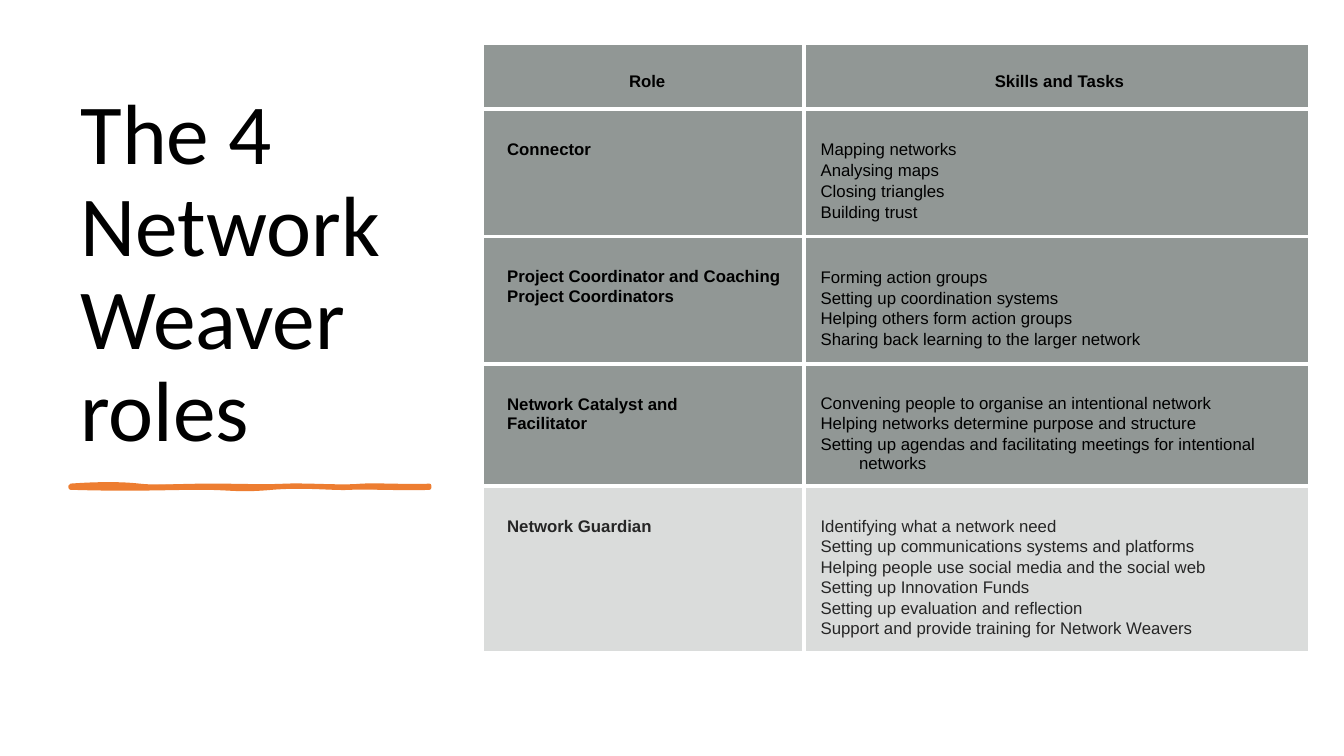
"""Build a slide with a title and a table of the four network weaver roles."""
from copy import deepcopy
from lxml.etree import SubElement
from pptx import Presentation
from pptx.dml.color import RGBColor
from pptx.enum.text import MSO_ANCHOR, PP_ALIGN
from pptx.oxml import parse_xml
from pptx.oxml.ns import nsdecls, qn
from pptx.util import Cm, Pt

COLORS = {"black": "000000", "dark": "262626", "white": "FFFFFF",
          "slate": "636B68", "mist": "878E8B", "orange": "ED7D31"}

ROLES = [
    ("Connector", 3.21, 1.07, 0,
     ["Mapping networks", "Analysing maps", "Closing triangles", "Building trust"]),
    ("Project Coordinator and Coaching Project Coordinators", 3.21, 1.07, 0,
     ["Forming action groups", "Setting up coordination systems",
      "Helping others form action groups",
      "Sharing back learning to the larger network"]),
    ("Network Catalyst and Facilitator", 3.08, 1.03, 1.2,
     ["Convening people to organise an intentional network",
      "Helping networks determine purpose and structure",
      "Setting up agendas and facilitating meetings for intentional networks"]),
    ("Network Guardian", 4.17, 1.05, 0,
     ["Identifying what a network need",
      "Setting up communications systems and platforms",
      "Helping people use social media and the social web",
      "Setting up Innovation Funds", "Setting up evaluation and reflection",
      "Support and provide training for Network Weavers"]),
]

STROKE_OUTLINE = [
    (1.78, 12.24),
    (2.46, 12.19), (3.07, 12.19), (3.51, 12.24),
    (3.94, 12.29), (4.5, 12.24), (5.31, 12.24),
    (6.12, 12.24), (6.6, 12.27), (7.21, 12.24),
    (7.82, 12.22), (8.61, 12.29), (9.12, 12.24),
    (9.63, 12.22), (10.46, 12.27), (10.82, 12.24),
    (10.82, 12.27), (10.82, 12.29), (10.82, 12.29),
    (10.36, 12.32), (9.25, 12.27), (8.84, 12.29),
    (8.43, 12.32), (7.72, 12.22), (6.86, 12.29),
    (5.97, 12.37), (5.87, 12.29), (5.05, 12.29),
    (4.22, 12.29), (3.35, 12.34), (1.78, 12.29),
    (1.78, 12.29), (1.78, 12.27), (1.78, 12.24),
]
STROKE_BODY = [
    (1.78, 12.24),
    (2.59, 12.29), (2.79, 12.27), (3.51, 12.24),
    (4.22, 12.22), (4.29, 12.19), (5.05, 12.24),
    (5.79, 12.29), (6.63, 12.27), (7.04, 12.24),
    (7.44, 12.22), (8.31, 12.32), (8.74, 12.24),
    (9.19, 12.19), (10.08, 12.34), (10.82, 12.24),
    (10.82, 12.27), (10.82, 12.27), (10.82, 12.29),
    (10.46, 12.29), (9.45, 12.37), (9.02, 12.29),
    (8.59, 12.24), (7.72, 12.29), (7.04, 12.29),
    (6.2, 12.29), (6.1, 12.27), (5.49, 12.29),
    (4.9, 12.32), (4.65, 12.27), (3.68, 12.29),
    (2.82, 12.32), (2.34, 12.29), (1.78, 12.29),
    (1.78, 12.27), (1.78, 12.27), (1.78, 12.24),
]


def color(name):
    """Return the named colour."""
    return RGBColor.from_string(COLORS[name])


def write(tf, lines, size=12, font="Arial", ink="black", bold=False,
          align=PP_ALIGN.LEFT, spacing=1.07, before=0, left=0, right=0, indent=0):
    """Write one paragraph per line into a text frame."""
    for i, line in enumerate(lines):
        p = tf.paragraphs[0] if i == 0 else tf.add_paragraph()
        p.alignment = align
        p.line_spacing = spacing
        p.space_before = Pt(before if i else 0)
        pPr = p._p.get_or_add_pPr()
        for key, length in (("marL", left), ("marR", right), ("indent", indent)):
            pPr.set(key, str(Cm(length)))
        r = p.add_run()
        r.text = line
        r.font.size, r.font.name, r.font.bold = Pt(size), font, bold
        r.font.color.rgb = color(ink)


def bend(contour):
    """Turn each three line segments of a contour into one cubic curve."""
    lines = contour.findall(qn("a:lnTo"))
    for i in range(0, len(lines), 3):
        curve = SubElement(contour, qn("a:cubicBezTo"))
        lines[i].addprevious(curve)
        for line in lines[i:i + 3]:
            curve.append(line[0])
            contour.remove(line)


class Deck:
    """Hold the style and the current slide."""

    def __init__(self, prs):
        self.s = prs.slides.add_slide(prs.slide_layouts[6])
        self.border = "white"
        self.border_width = Pt(3)

    def title(self, text, x, y, w, h):
        """Add the large title, set on the bottom of its box."""
        tf = self.s.shapes.add_textbox(Cm(x), Cm(y), Cm(w), Cm(h)).text_frame
        tf.word_wrap = True
        tf.vertical_anchor = MSO_ANCHOR.BOTTOM
        write(tf, [text], size=61, font="Calibri", spacing=0.9)

    def brush(self, outline, body, name):
        """Add a brush stroke made of an outline and a filled body."""
        first, *rest = [[(Cm(x), Cm(y)) for x, y in nodes] for nodes in (outline, body)]
        fb = self.s.shapes.build_freeform(*first[0])
        fb.add_line_segments(first[1:], close=True)
        for nodes in rest:
            fb.move_to(*nodes[0])
            fb.add_line_segments(nodes[1:], close=True)
        sp = fb.convert_to_shape()
        sp.shadow.inherit = False
        sp.fill.solid()
        sp.fill.fore_color.rgb = sp.line.color.rgb = color(name)
        sp.line.width = Pt(3)

        stroked = next(sp._element.iter(qn("a:path")))
        filled = deepcopy(stroked)
        stroked.addnext(filled)
        count = len(outline) + 1
        for contour, extra in ((stroked, stroked[count:]), (filled, filled[:count])):
            for node in extra:
                contour.remove(node)
            bend(contour)
        stroked.set("fill", "none")
        filled.set("stroke", "0")

    def table(self, x, y, widths, heights):
        """Add an empty table without bands."""
        table = self.s.shapes.add_table(
            len(heights), len(widths), Cm(x), Cm(y),
            Cm(sum(widths)), Cm(sum(heights))).table
        table.horz_banding = False
        for col, w in zip(table.columns, widths):
            col.width = Cm(w)
        for row, h in zip(table.rows, heights):
            row.height = Cm(h)
        return table

    def cell(self, cell, lines, fill, alpha, sides, top=0.76, **style):
        """Fill, border and write one cell."""
        cell.margin_left, cell.margin_top = Cm(0.41), Cm(top)
        cell.margin_right, cell.margin_bottom = Cm(0.25), Cm(0.1)
        cell.fill.solid()
        cell.fill.fore_color.rgb = color(fill)
        tcPr = cell._tc.get_or_add_tcPr()
        clr = next(tcPr.iter(qn("a:srgbClr")))
        SubElement(clr, qn("a:alpha")).set("val", str(alpha * 1000))
        for i, side in enumerate(sides):
            tcPr.insert(i, parse_xml(
                f'<a:ln{side} {nsdecls("a")} w="{self.border_width}"><a:solidFill>'
                f'<a:srgbClr val="{COLORS[self.border]}"/></a:solidFill></a:ln{side}>'))
        write(cell.text_frame, lines, **style)


def main():
    """Build and save the slide."""
    prs = Presentation()
    prs.slide_width, prs.slide_height = Cm(33.87), Cm(19.05)
    deck = Deck(prs)
    deck.title("The 4 Network Weaver roles", 1.78, 1.78, 9.93, 9.93)
    deck.brush(STROKE_OUTLINE, STROKE_BODY, "orange")

    heights = [1.63] + [role[1] for role in ROLES]
    table = deck.table(12.19, 1.12, [8.08, 12.7], heights)
    inner = "RL"
    for col, head in enumerate(["Role", "Skills and Tasks"]):
        deck.cell(table.cell(0, col), [head], "slate", 70, inner[col] + "B",
                  top=0.66, bold=True, align=PP_ALIGN.CENTER)
    for row, (role, _, spacing, right, tasks) in enumerate(ROLES, 1):
        last = row == len(ROLES)
        fill, alpha, ink = ("mist", 30, "dark") if last else ("slate", 70, "black")
        edges = "T" if last else "TB"
        deck.cell(table.cell(row, 0), [role], fill, alpha, inner[0] + edges,
                  ink=ink, bold=True, spacing=1.05, left=0.18, right=right)
        deck.cell(table.cell(row, 1), tasks, fill, alpha, inner[1] + edges,
                  ink=ink, spacing=spacing, before=0.5, left=0.97, indent=-0.97)
    prs.save("out.pptx")


if __name__ == "__main__":
    main()
